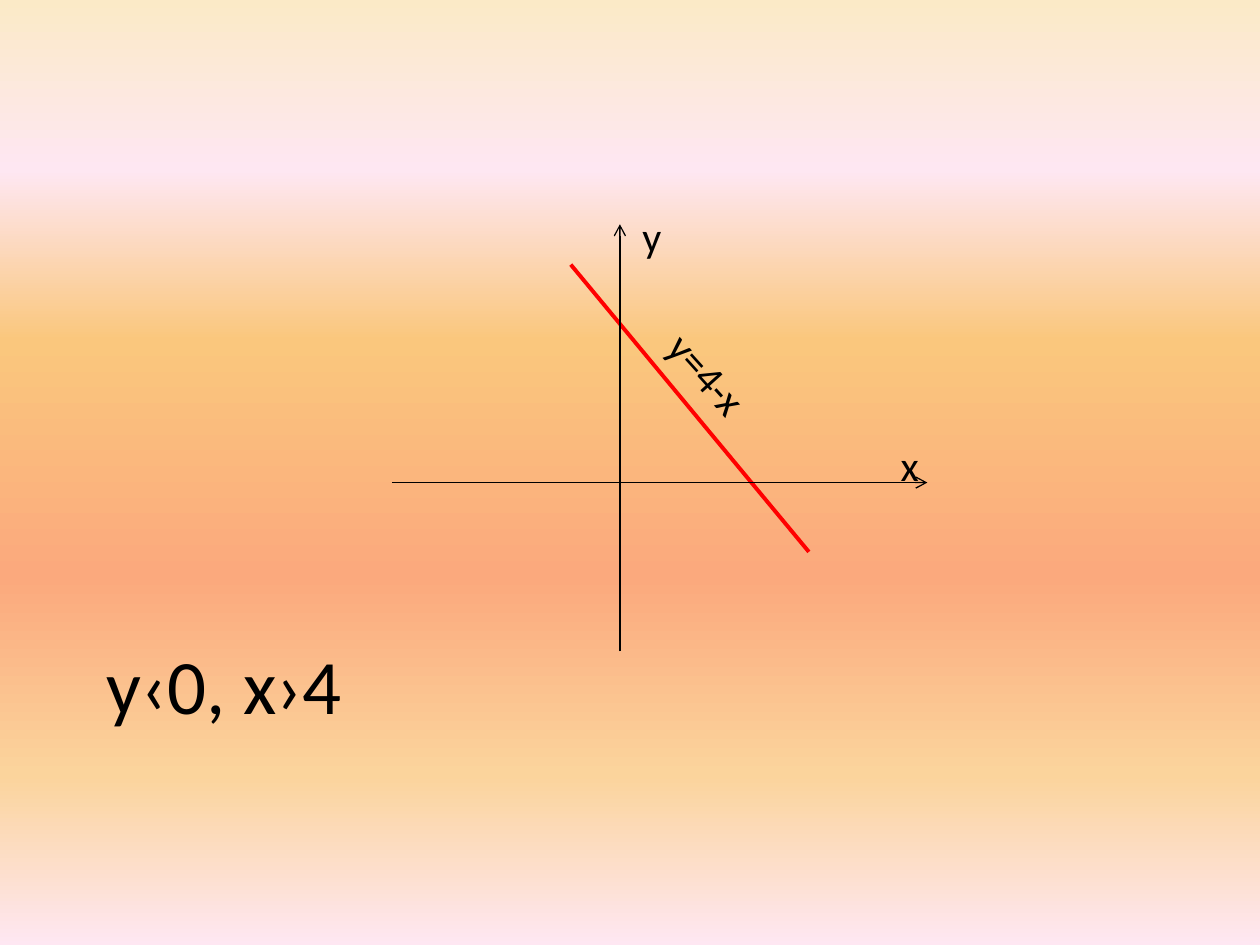
from lxml.etree import SubElement
from pptx import Presentation
from pptx.dml.color import RGBColor
from pptx.enum.shapes import MSO_CONNECTOR
from pptx.enum.text import MSO_AUTO_SIZE
from pptx.oxml.ns import qn
from pptx.util import Inches, Pt

deck = Presentation()
deck.slide_width, deck.slide_height = Inches(10), Inches(7.5)
slide = deck.slides.add_slide(deck.slide_layouts[6])

# One unit is a hundredth of the slide's width
unit = deck.slide_width / 100


def color(code):
    return RGBColor.from_string(code)


def write(text, left, top, wide, high, size=24, turn=0):
    box = slide.shapes.add_textbox(*[round(n * unit) for n in (left, top, wide, high)])
    box.rotation = turn
    frame = box.text_frame
    frame.word_wrap = True
    frame.auto_size = MSO_AUTO_SIZE.SHAPE_TO_FIT_TEXT
    run = frame.paragraphs[0].add_run()
    run.text = text
    run.font.name = "Calibri"
    run.font.size = Pt(size)
    run.font.color.rgb = color("000000")


# Background: six bands, top to bottom
slide.background.fill.gradient()
stops = slide.element.find(".//" + qn("a:gsLst"))
stops.clear()
for share, code in [(0, "FBEAC7"), (18, "FEE7F2"), (36, "FAC77D"),
                    (61, "FBA97D"), (82, "FBD49C"), (100, "FEE7F2")]:
    stop = SubElement(stops, qn("a:gs"), pos=str(share * 1000))
    SubElement(stop, qn("a:srgbClr"), val=code)
slide.element.find(".//" + qn("a:lin")).set("ang", str(90 * 60000))

# Graph line, x axis, y axis
for ends, code, width, arrow in [
    ((45.3, 21, 64.2, 43.8), "FF0000", 2.25, False),
    ((31.1, 38.3, 73.6, 38.3), "000000", 0.75, True),
    ((49.2, 51.7, 49.2, 17.8), "000000", 0.75, True),
]:
    line = slide.shapes.add_connector(
        MSO_CONNECTOR.STRAIGHT, *[round(n * unit) for n in ends])
    line.line.color.rgb = color(code)
    line.line.width = Pt(width)
    props = line.element.spPr
    if arrow:
        SubElement(props.find(qn("a:ln")), qn("a:tailEnd"), type="arrow")
    SubElement(props, qn("a:effectLst"))

# Labels and answer
write("y=4-x", 49.3, 32.2, 22.8, 5, turn=48)
write("x", 70.5, 34.4, 3.9, 5)
write("y", 50, 16.2, 3.9, 5)
write("y‹0, x›4", 7.5, 50.1, 27.6, 14.5, size=44)

deck.save("out.pptx")
